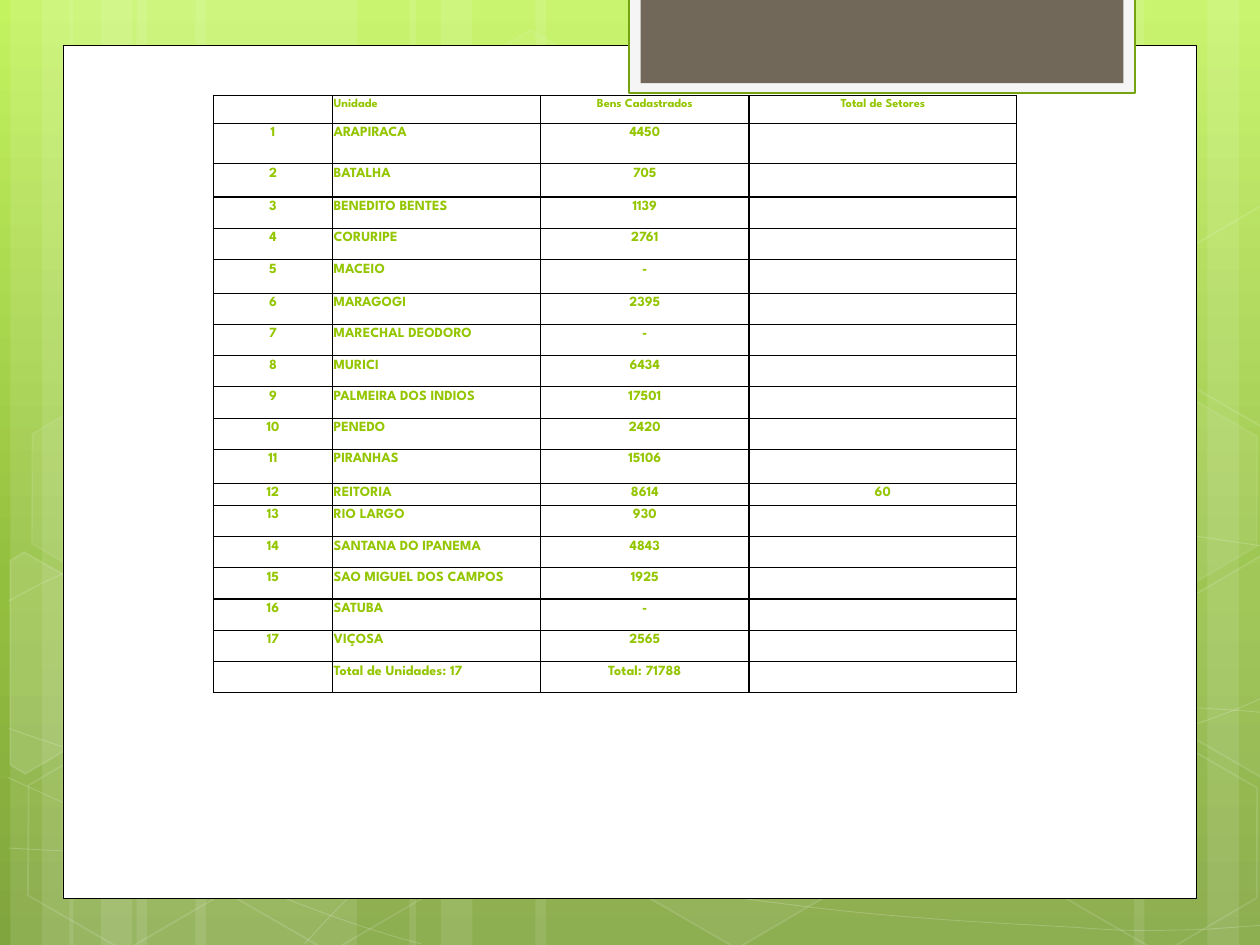
from copy import deepcopy
from itertools import product
from math import cos, radians, sin
from typing import NamedTuple, Optional

from lxml.etree import SubElement
from pptx import Presentation
from pptx.dml.color import RGBColor
from pptx.enum.shapes import MSO_SHAPE
from pptx.enum.text import PP_ALIGN
from pptx.oxml.ns import qn
from pptx.util import Pt

WHITE, BLACK, GREEN = "FFFFFF", "000000", "94C600"
FONT = "League Spartan"
TILT = 30


class Paint(NamedTuple):
    color: str
    opacity: int = 100
    width: float = 1


class Box(NamedTuple):
    left: float
    top: float
    width: float
    height: float


class Hexagon(NamedTuple):
    left: float
    top: float
    fill: Optional[int]
    line: int


class Shard(NamedTuple):
    center: tuple
    points: list
    fill: Optional[int]


BANDS = [(78, 126), (6, 36), (24, 60), (111.6, 126), (39.6, 36), (57.6, 60),
         (528, 126), (690, 36), (648, 60), (306, 222), (234, 36), (252, 60)]

CURVES = [
    [(5, 484.6), (43.9, 486.7), (82.8, 488.9), (136.8, 488.2), (190.8, 487.4),
     (257.8, 486), (329.8, 478.8), (401.8, 471.6), (504, 457.9), (570.2, 444.2),
     (635.8, 430.6), (703.4, 409), (725, 396.7)],
    [(5, 343.4), (25.9, 331.9), (46.8, 321.1), (87.1, 310.3), (128.2, 299.5),
     (186.5, 283.7), (249.8, 278.6), (313.9, 273.6), (391.7, 272.9), (470.9, 278.6),
     (550.1, 284.4), (681.8, 306.7), (725, 312.5)],
    [(4.3, 444.2), (91.4, 483.8), (177.8, 523.4), (240.5, 539.3)],
    [(5, 416.2), (27.4, 424.1), (50.4, 432), (92.2, 443.5), (133.9, 454.3),
     (196.6, 472.3), (257, 484.6), (316.8, 496.8), (392.4, 509.8), (452.2, 517),
     (511.9, 524.9), (576, 527.8), (614.2, 529.9), (651.6, 532.8), (661.7, 531.4),
     (680.4, 531.4), (699.1, 530.6), (712.1, 529.2), (725, 528.5)],
    [(174.2, 539.3), (187.2, 524.9), (200.2, 510.5), (217.4, 497.5), (234.7, 484.6),
     (259.2, 470.2), (279.4, 460.1), (299.5, 450), (311.8, 445.7), (338.4, 438.5),
     (364.3, 431.3), (412.6, 421.2), (437.8, 416.2), (463.7, 411.1), (467.3, 411.1),
     (489.6, 409.7), (511.9, 407.5), (547.2, 405.4), (571.7, 404.6), (596.9, 403.9),
     (637.9, 404.6), (637.9, 404.6), (637.9, 404.6), (686.2, 404.6), (686.2, 404.6),
     (699.1, 405.4), (711.4, 406.1), (717.8, 406.8), (724.3, 407.5), (722.2, 406.8),
     (724.3, 407.5)],
]

HEXAGONS = [
    Hexagon(240.5, 25.9, 4, 8), Hexagon(357.8, 424.1, 6, 12),
    Hexagon(7.9, 425.5, None, 12), Hexagon(10.1, 224.6, 7, 8),
    Hexagon(125.3, 426.2, None, 12), Hexagon(542.2, 326.2, 10, 12),
    Hexagon(600.5, 427, None, 12), Hexagon(600.5, 226.1, 7, 8),
]

SHARDS = [
    Shard((25.9, 385.2), [(5.8, 320.4), (13.7, 315.4), (69.1, 347), (68.4, 410.4),
                          (14.4, 442.1), (5.8, 437)], 10),
    Shard((709.2, 374.4), [(666.7, 349.2), (720.7, 317.5), (726.5, 321.1), (726.5, 441.4),
                           (721.4, 444.2), (666.7, 412.6)], 4),
    Shard((709.2, 173.5), [(666.7, 149), (720.7, 117.4), (727.2, 121), (726.5, 241.2),
                           (721.4, 244.1), (666.7, 212.4)], None),
]

UNITS = [
    ("ARAPIRACA", "4450"), ("BATALHA", "705"), ("BENEDITO BENTES", "1139"),
    ("CORURIPE", "2761"), ("MACEIO", "-"), ("MARAGOGI", "2395"),
    ("MARECHAL DEODORO", "-"), ("MURICI", "6434"), ("PALMEIRA DOS INDIOS", "17501"),
    ("PENEDO", "2420"), ("PIRANHAS", "15106"), ("REITORIA", "8614"),
    ("RIO LARGO", "930"), ("SANTANA DO IPANEMA", "4843"),
    ("SAO MIGUEL DOS CAMPOS", "1925"), ("SATUBA", "-"), ("VIÇOSA", "2565"),
]
SECTORS = {"REITORIA": "60"}
COLUMN_WIDTHS = [68, 119, 119, 153]
ROW_HEIGHT = 17.87
SPECIAL_HEIGHTS = {0: 15.8, 1: 23, 2: 19.2, 5: 19.2, 11: 19.4, 12: 12.6}


def rgb(color: str) -> RGBColor:
    return RGBColor.from_string(color)


def paint_fill(fill, paint: Paint) -> None:
    fill.solid()
    fill.fore_color.rgb = rgb(paint.color)
    if paint.opacity < 100:
        color = fill._xPr.find(".//" + qn("a:srgbClr"))
        SubElement(color, qn("a:alpha"), val=str(paint.opacity * 1000))


def style(shape, fill: Optional[Paint] = None, line: Optional[Paint] = None) -> None:
    shape.shadow.inherit = False
    if fill:
        paint_fill(shape.fill, fill)
    else:
        shape.fill.background()
    if line:
        shape.line.width = Pt(line.width)
        paint_fill(shape.line.fill, line)
    else:
        shape.line.fill.background()


def add_preset(page, kind, box: Box, fill: Optional[Paint] = None, line: Optional[Paint] = None):
    shape = page.shapes.add_shape(kind, *map(Pt, box))
    style(shape, fill, line)
    return shape


def add_outline(page, points: list, closed: bool, fill: Optional[Paint], line: Paint):
    corners = [(Pt(x), Pt(y)) for x, y in points]
    builder = page.shapes.build_freeform(*corners[0])
    builder.add_line_segments(corners[1:], close=closed)
    shape = builder.convert_to_shape()
    style(shape, fill, line)
    return shape


def add_curve(page, knots: list) -> None:
    shape = add_outline(page, knots, False, None, Paint(WHITE, 20, 0.5))
    outline = next(shape._element.iter(qn("a:path")))
    segments = outline.findall(qn("a:lnTo"))
    for first in range(0, len(segments), 3):
        start, control, other, end = knots[first:first + 4]
        trio = segments[first:first + 3]
        for segment in trio:
            outline.remove(segment)
        if start == control and other == end:
            outline.append(trio[2])
        else:
            bend = SubElement(outline, qn("a:cubicBezTo"))
            bend.extend([segment[0] for segment in trio])


def add_shard(page, shard: Shard) -> None:
    center_x, center_y = shard.center
    cosine, sine = cos(radians(TILT)), sin(radians(TILT))
    upright = [(center_x + (x - center_x) * cosine + (y - center_y) * sine,
                center_y + (y - center_y) * cosine - (x - center_x) * sine)
               for x, y in shard.points]
    add_outline(page, upright, True, faint(shard.fill), faint(12)).rotation = TILT


def faint(opacity: Optional[int]) -> Optional[Paint]:
    return Paint(WHITE, opacity) if opacity else None


def paint_background(page) -> None:
    fill = page.background.fill
    fill.gradient()
    fill.gradient_angle = 270
    stop_list = next(page._element.iter(qn("a:gsLst")))
    stop_list.insert(1, deepcopy(stop_list[0]))
    stops = [("C3F35F", 0), ("93BF3F", 0.62), ("81A53E", 1)]
    for stop, (color, position) in zip(fill.gradient_stops, stops):
        stop.color.rgb = rgb(color)
        stop.position = position


def write_cell(cell, text: str, *, size: int, align: PP_ALIGN) -> None:
    cell.margin_left = cell.margin_right = cell.margin_top = cell.margin_bottom = Pt(0.7)
    para = cell.text_frame.paragraphs[0]
    para.alignment = align
    para.line_spacing = 1.2
    if text:
        span = para.add_run()
        span.text = text
        span.font.size, span.font.bold, span.font.name = Pt(size), True, FONT
        span.font.color.rgb = rgb(GREEN)
    else:
        SubElement(para._p, qn("a:endParaRPr"), sz=str(size * 100))
    properties = cell._tc.get_or_add_tcPr()
    for side in ("lnL", "lnR", "lnT", "lnB"):
        border = SubElement(properties, qn("a:" + side), w=str(Pt(0.75)))
        SubElement(SubElement(border, qn("a:solidFill")), qn("a:srgbClr"), val=BLACK)
    cell.fill.background()


def add_unit_table(page) -> None:
    rows = [("", "Unidade", "Bens Cadastrados", "Total de Setores")]
    rows += [(str(number), name, goods, SECTORS.get(name, ""))
             for number, (name, goods) in enumerate(UNITS, 1)]
    rows.append(("", f"Total de Unidades: {len(UNITS)}", "Total: 71788", ""))
    heights = [SPECIAL_HEIGHTS.get(index, ROW_HEIGHT) for index in range(len(rows))]
    box = Box(122, 54.6, sum(COLUMN_WIDTHS), sum(heights))
    table = page.shapes.add_table(len(rows), len(COLUMN_WIDTHS), *map(Pt, box)).table
    table.first_row = table.horz_banding = False
    for column, width in zip(table.columns, COLUMN_WIDTHS):
        column.width = Pt(width)
    for row, height in zip(table.rows, heights):
        row.height = Pt(height)
    for row, column in product(range(len(rows)), range(len(COLUMN_WIDTHS))):
        write_cell(table.cell(row, column), rows[row][column], size=8 if row else 7,
                   align=PP_ALIGN.LEFT if column == 1 else PP_ALIGN.CENTER)


def main() -> None:
    deck = Presentation()
    deck.slide_width, deck.slide_height = Pt(720), Pt(540)
    page = deck.slides.add_slide(deck.slide_layouts[6])
    paint_background(page)
    for left, width in BANDS:
        add_preset(page, MSO_SHAPE.RECTANGLE, Box(left, 0, width, 540), faint(10))
    for knots in CURVES:
        add_curve(page, knots)
    for item in HEXAGONS:
        shape = add_preset(page, MSO_SHAPE.HEXAGON, Box(item.left, item.top, 126, 109.4),
                           faint(item.fill), faint(item.line))
        shape.rotation = TILT
        shape.adjustments[0], shape.adjustments[1] = 0.285, 1.155
    for shard in SHARDS:
        add_shard(page, shard)
    add_preset(page, MSO_SHAPE.RECTANGLE, Box(36, 26, 648, 487.3), Paint(WHITE), Paint(BLACK, 100, 0.5))
    add_preset(page, MSO_SHAPE.RECTANGLE, Box(359.2, -1.5, 289.5, 54.7), Paint("F5F5F5"), Paint("74A510", 100, 1.25))
    add_preset(page, MSO_SHAPE.RECTANGLE, Box(366, -1.5, 276, 49), Paint("71685A"))
    add_unit_table(page)
    deck.save("out.pptx")


if __name__ == "__main__":
    main()
